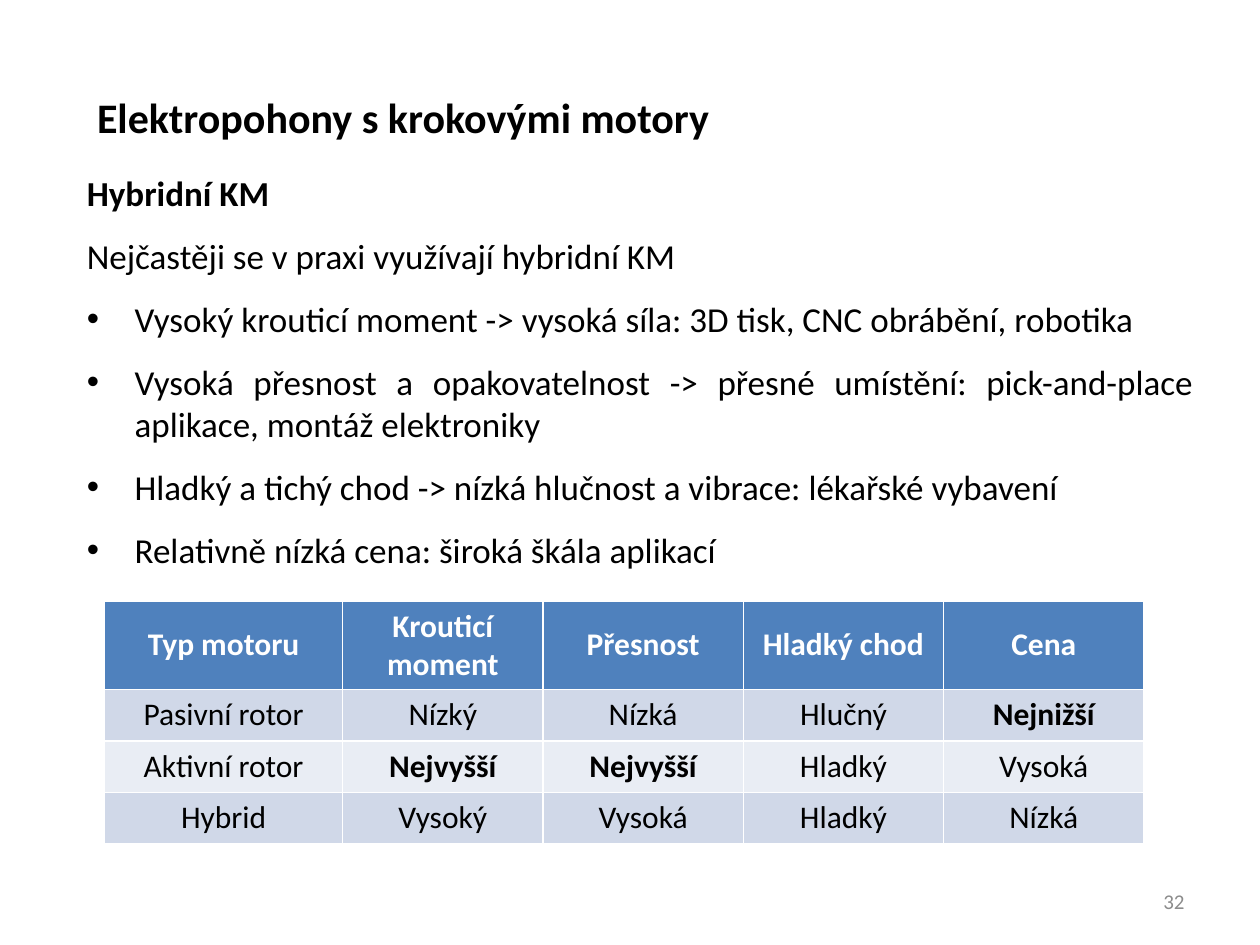
"""Build a slide on hybrid stepper motors with a comparison table."""
from lxml import etree
from pptx import Presentation
from pptx.dml.color import RGBColor
from pptx.enum import text
from pptx.oxml.ns import qn
from pptx.util import Inches, Pt

BLACK = RGBColor(0x00, 0x00, 0x00)
WHITE = RGBColor(0xFF, 0xFF, 0xFF)
GREY = RGBColor(0x8C, 0x8C, 0x8C)
HEADER = RGBColor(0x4F, 0x81, 0xBD)
BANDS = [RGBColor(0xE9, 0xED, 0xF4), RGBColor(0xD0, 0xD8, 0xE8)]
ALIGN = text.PP_ALIGN
ANCHOR = text.MSO_ANCHOR


def style(p, size, color, bold, align):
    p.alignment = align
    p.font.name = "Calibri"
    p.font.size = Pt(size)
    p.font.bold = bold
    p.font.color.rgb = color


prs = Presentation()
prs.slide_width, prs.slide_height = Inches(10), Inches(7.5)
s = prs.slides.add_slide(prs.slide_layouts[5])

title = s.shapes.title
title.left, title.top = Inches(0.67), Inches(0.68)
title.width, title.height = Inches(8.82), Inches(0.5)
tf = title.text_frame
tf.text = "Elektropohony s krokovými motory"
tf.vertical_anchor = ANCHOR.TOP
tf.auto_size = text.MSO_AUTO_SIZE.NONE
style(tf.paragraphs[0], 24, BLACK, True, ALIGN.LEFT)

lines = [
    "Hybridní KM",
    "Nejčastěji se v praxi využívají hybridní KM",
    "Vysoký krouticí moment -> vysoká síla: 3D tisk, CNC obrábění, robotika",
    "Vysoká přesnost a opakovatelnost -> přesné umístění: pick-and-place aplikace, montáž elektroniky",
    "Hladký a tichý chod -> nízká hlučnost a vibrace: lékařské vybavení",
    "Relativně nízká cena: široká škála aplikací",
]
body = s.shapes.add_textbox(Inches(0.59), Inches(1.31), Inches(8.98), Inches(3.3))
tf = body.text_frame
tf.word_wrap = True
tf.text = "\n".join(lines)
for i, p in enumerate(tf.paragraphs):
    style(p, 20, BLACK, i == 0, ALIGN.JUSTIFY)
    p.space_after = Pt(12)
    if i >= 2:
        pPr = p._p.get_or_add_pPr()
        pPr.set("marL", str(Inches(0.38)))
        pPr.set("indent", str(-Inches(0.38)))
        bullet_font = etree.Element(qn("a:buFont"), typeface="Arial")
        bullet = etree.Element(qn("a:buChar"), char="•")
        pPr.find(qn("a:spcAft")).addnext(bullet_font)
        bullet_font.addnext(bullet)

rows = [
    ["Typ motoru", "Krouticí moment", "Přesnost", "Hladký chod", "Cena"],
    ["Pasivní rotor", "Nízký", "Nízká", "Hlučný", "Nejnižší"],
    ["Aktivní rotor", "Nejvyšší", "Nejvyšší", "Hladký", "Vysoká"],
    ["Hybrid", "Vysoký", "Vysoká", "Hladký", "Nízká"],
]
table = s.shapes.add_table(len(rows), len(rows[0]), Inches(0.83), Inches(4.77),
                           Inches(8.25), Inches(1.92)).table
for c, column in enumerate(table.columns):
    column.width = Inches(1.59 if c else 1.89)
for r, values in enumerate(rows):
    table.rows[r].height = Inches(0.41 if r else 0.69)
    for c, value in enumerate(values):
        cell = table.cell(r, c)
        cell.text = value
        cell.fill.solid()
        cell.fill.fore_color.rgb = BANDS[r % 2] if r else HEADER
        cell.vertical_anchor = ANCHOR.TOP if r else ANCHOR.MIDDLE
        bold = r == 0 or value.startswith("Nej")
        style(cell.text_frame.paragraphs[0], 18, BLACK if r else WHITE, bold, ALIGN.CENTER)

number = s.shapes.add_textbox(Inches(7.17), Inches(6.95), Inches(2.33), Inches(0.4))
tf = number.text_frame
tf.word_wrap = True
tf.text = "32"
tf.vertical_anchor = ANCHOR.MIDDLE
style(tf.paragraphs[0], 12, GREY, False, ALIGN.RIGHT)

prs.save("out.pptx")
